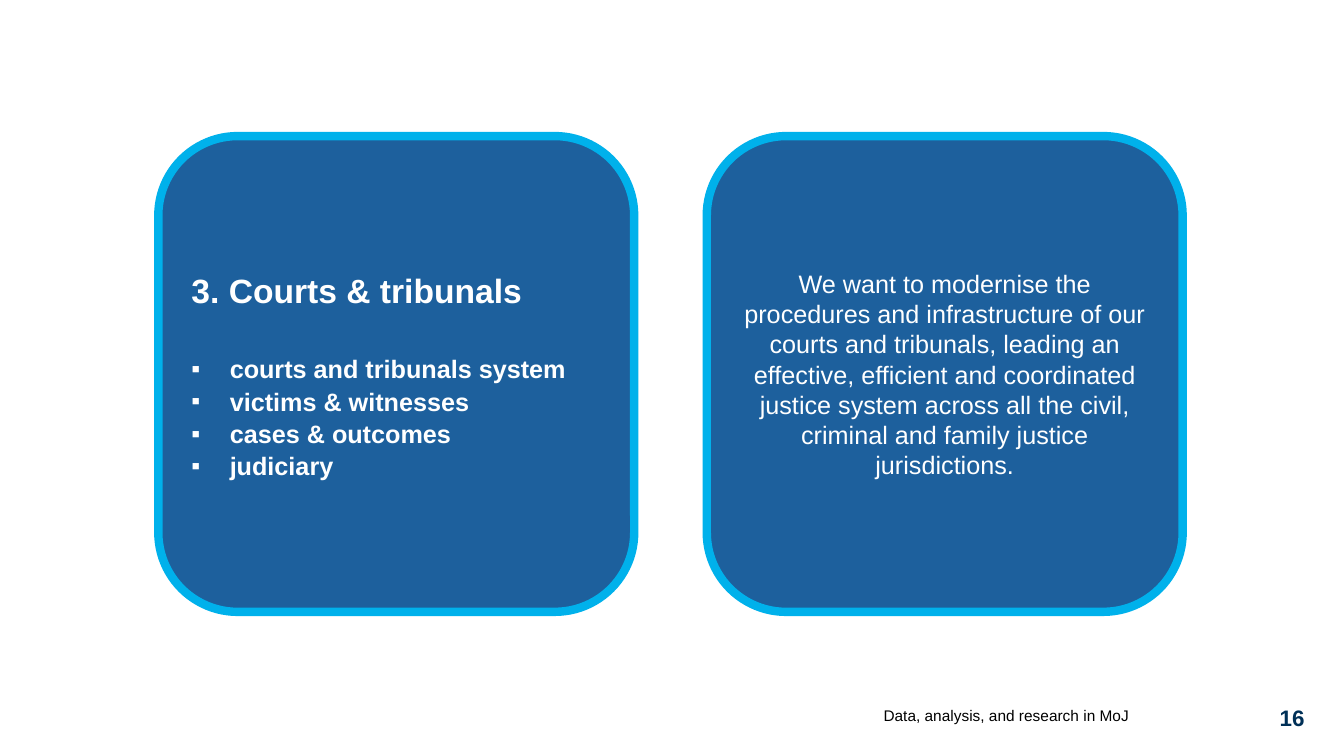
from lxml.etree import SubElement
from pptx import Presentation
from pptx.dml.color import RGBColor
from pptx.enum.shapes import MSO_SHAPE
from pptx.enum.text import MSO_ANCHOR, PP_ALIGN
from pptx.oxml.ns import qn
from pptx.util import Inches, Pt

WHITE = RGBColor(0xFF, 0xFF, 0xFF)
BLACK = RGBColor(0x00, 0x00, 0x00)
NAVY = RGBColor(0x00, 0x30, 0x57)
BLUE = RGBColor(0x1D, 0x60, 0x9D)
CYAN = RGBColor(0x00, 0xB1, 0xEB)

CARD_SIZE = 4.72
CARD_TOP = 1.35
CARD_LEFT = 1.57
CARD_STEP = 5.44
BULLET_INDENT = 0.38

TOPICS = [
    "courts and tribunals system",
    "victims & witnesses",
    "cases & outcomes",
    "judiciary",
]
AIM = (
    "We want to modernise the procedures and infrastructure of our courts "
    "and tribunals, leading an effective, efficient and coordinated justice "
    "system across all the civil, criminal and family justice jurisdictions."
)


def add_bullet(para):
    properties = para._p.get_or_add_pPr()
    properties.set("marL", str(Inches(BULLET_INDENT)))
    properties.set("indent", str(-Inches(BULLET_INDENT)))
    SubElement(properties, qn("a:buFont"), typeface="Arial")
    SubElement(properties, qn("a:buChar"), char="▪")


def write(para, text, size=18, color=WHITE, bold=False, align=PP_ALIGN.LEFT,
          spacing=None, before=0, bullet=False):
    if bullet:
        add_bullet(para)
    para.alignment = align
    para.line_spacing = spacing
    para.space_before = Pt(before)
    span = para.add_run()
    span.text = text
    span.font.name = "Arial"
    span.font.size = Pt(size)
    span.font.bold = bold
    span.font.color.rgb = color


def add_card(page, left, top, size):
    card = page.shapes.add_shape(
        MSO_SHAPE.ROUNDED_RECTANGLE,
        Inches(left), Inches(top), Inches(size), Inches(size))
    card.shadow.inherit = False
    card.fill.solid()
    card.fill.fore_color.rgb = BLUE
    card.line.color.rgb = CYAN
    card.line.width = Pt(6)
    frame = card.text_frame
    frame.word_wrap = True
    frame.vertical_anchor = MSO_ANCHOR.MIDDLE
    return frame


def add_topics_card(page, left, top, size):
    frame = add_card(page, left, top, size)
    write(frame.paragraphs[0], "3. Courts & tribunals", size=24, bold=True,
          spacing=1.07)
    for index, topic in enumerate(TOPICS):
        write(frame.add_paragraph(), topic, bold=True, spacing=1.07,
              before=0 if index else 29.5, bullet=True)


def add_aim_card(page, left, top, size):
    frame = add_card(page, left, top, size)
    write(frame.paragraphs[0], AIM, align=PP_ALIGN.CENTER)


def add_label(page, left, top, width, height, text, anchor, **style):
    box = page.shapes.add_textbox(
        Inches(left), Inches(top), Inches(width), Inches(height))
    frame = box.text_frame
    frame.word_wrap = True
    frame.vertical_anchor = anchor
    frame.margin_left = frame.margin_right = 0
    frame.margin_top = frame.margin_bottom = 0
    write(frame.paragraphs[0], text, **style)


def add_footer(page, left, top):
    add_label(page, left, top, 3.11, 0.36,
              "Data, analysis, and research in MoJ", MSO_ANCHOR.MIDDLE,
              size=11, color=BLACK, align=PP_ALIGN.RIGHT)
    add_label(page, left + 4.53, top + 0.07, 0.39, 0.28, "16", MSO_ANCHOR.TOP,
              size=16, color=NAVY, bold=True, align=PP_ALIGN.CENTER)


def main():
    deck = Presentation()
    deck.slide_width = Inches(13.33)
    deck.slide_height = Inches(7.5)
    page = deck.slides.add_slide(deck.slide_layouts[6])
    add_footer(page, 8.09, 6.92)
    add_topics_card(page, CARD_LEFT, CARD_TOP, CARD_SIZE)
    add_aim_card(page, CARD_LEFT + CARD_STEP, CARD_TOP, CARD_SIZE)
    deck.save("out.pptx")


if __name__ == "__main__":
    main()
